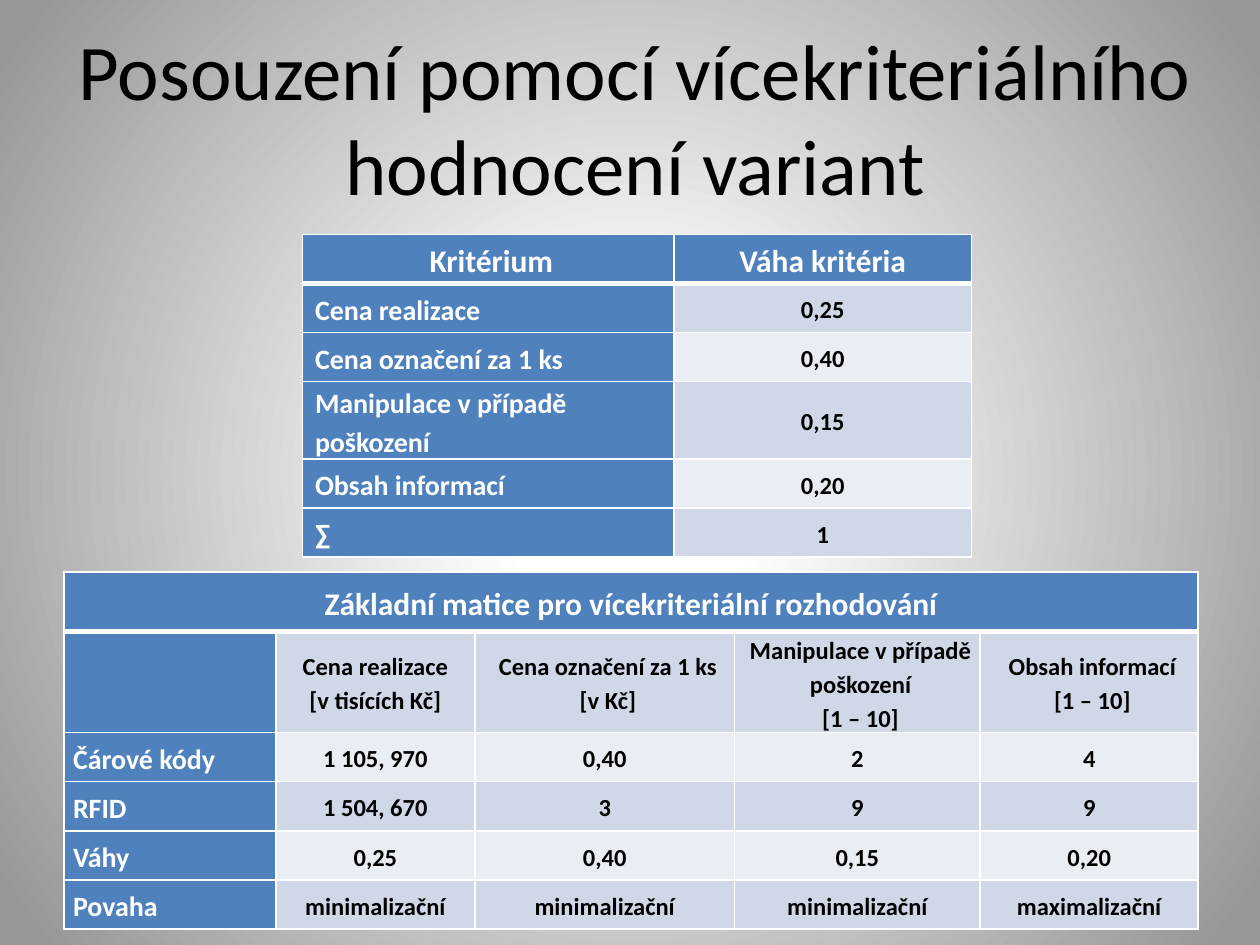
from lxml import etree
from pptx import Presentation
from pptx.dml.color import RGBColor
from pptx.enum.text import MSO_ANCHOR, PP_ALIGN
from pptx.oxml.ns import qn
from pptx.util import Inches, Pt

MIDDLE = MSO_ANCHOR.MIDDLE
LEFT, CENTER = PP_ALIGN.LEFT, PP_ALIGN.CENTER
FONT = "Calibri"
BLACK = RGBColor(0x00, 0x00, 0x00)
WHITE = RGBColor(0xFF, 0xFF, 0xFF)
GREY = RGBColor(0x97, 0x97, 0x97)
BLUE = RGBColor(0x4F, 0x81, 0xBD)
BANDS = [RGBColor(0xE9, 0xED, 0xF4), RGBColor(0xD0, 0xD8, 0xE8)]


def set_borders(cell, widths):
    """Draw white cell borders; widths maps a side (L, R, T, B) to points."""
    tcPr = cell._tc.get_or_add_tcPr()
    for side, width in widths.items():
        ln = etree.SubElement(tcPr, qn(f"a:ln{side}"), w=str(Pt(width)))
        fill = etree.SubElement(ln, qn("a:solidFill"))
        etree.SubElement(fill, qn("a:srgbClr"), val=str(WHITE))


def add_grid(box, cols, heights, rows, inset, indented):
    """Add a table with a header row and header column; indented lists (row, col) cells."""
    table = s.shapes.add_table(len(rows), len(cols), *map(Inches, box)).table
    for column, width in zip(table.columns, cols):
        column.width = Inches(width)
    for i, (height, texts) in enumerate(zip(heights, rows)):
        table.rows[i].height = Inches(height)
        for j, text in enumerate(texts):
            cell = table.cell(i, j)
            set_borders(cell, {"L": 1, "R": 1, "T": 3 if i == 1 else 1, "B": 3 if i == 0 else 1})
            cell.fill.solid()
            cell.fill.fore_color.rgb = BLUE if i == 0 or j == 0 else BANDS[i % 2]
            cell.vertical_anchor = MIDDLE
            cell.margin_left = cell.margin_right = Inches(inset)
            cell.margin_top = cell.margin_bottom = 0
            if i == 0:
                size, color, align = 18, WHITE, CENTER
            elif j == 0:
                size, color, align = 16, WHITE, LEFT
            else:
                size, color, align = 14, BLACK, CENTER
            cell.text_frame.text = text
            for p in cell.text_frame.paragraphs:
                p.alignment = align
                p.line_spacing = 1.15
                if (i, j) in indented:
                    p._p.get_or_add_pPr().set("marL", str(Inches(0.05)))
                for r in p.runs:
                    r.font.name, r.font.size, r.font.bold = FONT, Pt(size), True
                    r.font.color.rgb = color
    return table


prs = Presentation()
prs.slide_width, prs.slide_height = Inches(10), Inches(7.5)
s = prs.slides.add_slide(prs.slide_layouts[6])

# Radial background, white in the centre
bg_fill = s.background.fill
bg_fill.gradient()
for stop, (position, color) in zip(bg_fill.gradient_stops, [(0.17, WHITE), (0.96, GREY)]):
    stop.position = position
    stop.color.rgb = color
grad = s._element.find(".//" + qn("a:gradFill"))
grad.remove(grad.find(qn("a:lin")))
circle = etree.SubElement(grad, qn("a:path"), {"path": "circle"})
etree.SubElement(circle, qn("a:fillToRect"), {side: "50000" for side in "ltrb"})

# Title
title = s.shapes.add_textbox(Inches(0.12), Inches(0.3), Inches(9.84), Inches(1.25))
tf = title.text_frame
tf.word_wrap = True
tf.vertical_anchor = MIDDLE
p = tf.paragraphs[0]
p.alignment = CENTER
r = p.add_run()
r.text = "Posouzení pomocí vícekriteriálního hodnocení variant"
r.font.name, r.font.size = FONT, Pt(45)
r.font.color.rgb = BLACK

# Criteria weights
weights = [
    ["Kritérium", "Váha kritéria"],
    ["Cena realizace", "0,25"],
    ["Cena označení za 1 ks", "0,40"],
    ["Manipulace v případě poškození", "0,15"],
    ["Obsah informací", "0,20"],
    ["∑", "1"],
]
add_grid((2.4, 1.86, 5.31, 2.54), [2.95, 2.36], [0.39] * 6, weights, 0.05,
         [(i, 0) for i in range(6)])

# Decision matrix
matrix = [
    ["Základní matice pro vícekriteriální rozhodování", "", "", "", ""],
    ["", "Cena realizace\n[v tisících Kč]", "Cena označení za 1 ks\n[v Kč]",
     "Manipulace v případě poškození\n[1 – 10]", "Obsah informací\n[1 – 10]"],
    ["Čárové kódy", "1 105, 970", "0,40", "2", "4"],
    ["RFID", "1 504, 670", "3", "9", "9"],
    ["Váhy", "0,25", "0,40", "0,15", "0,20"],
    ["Povaha", "minimalizační", "minimalizační", "minimalizační", "maximalizační"],
]
table = add_grid((0.51, 4.54, 9, 2.83), [1.68, 1.58, 2.06, 1.95, 1.73],
                 [0.47] * 2 + [0.39] * 4, matrix, 0.07, [(1, 2), (1, 3), (1, 4)])
table.cell(0, 0).merge(table.cell(0, 4))

prs.save("out.pptx")
